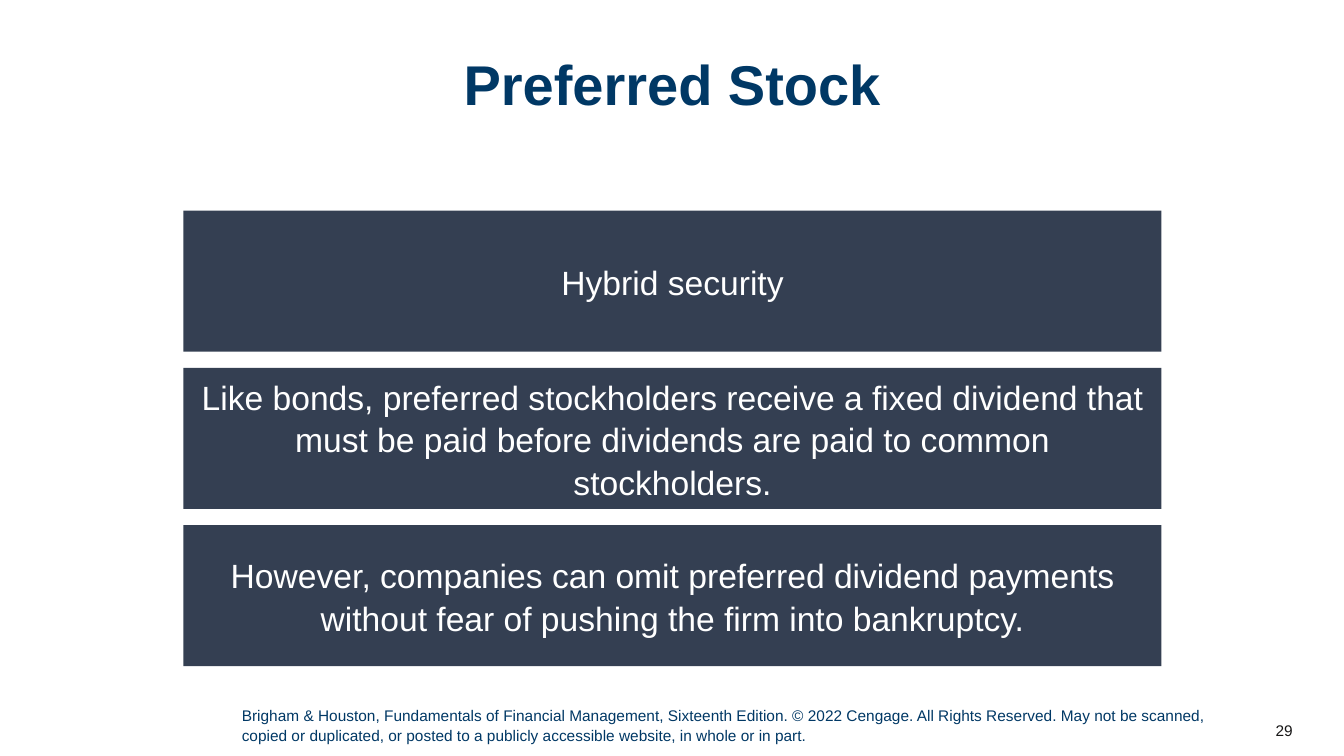
from pptx import Presentation
from pptx.dml.color import RGBColor
from pptx.enum import shapes, text
from pptx.util import Inches, Pt

COLORS = {
    "navy": "003865",
    "slate": "343F52",
    "white": "FFFFFF",
    "ink": "181717",
}
FONT = "Arial"
POINTS = [
    "Hybrid security",
    "Like bonds, preferred stockholders receive a fixed dividend that must be "
    "paid before dividends are paid to common stockholders.",
    "However, companies can omit preferred dividend payments without fear of "
    "pushing the firm into bankruptcy.",
]
COPYRIGHT = (
    "Brigham & Houston, Fundamentals of Financial Management, Sixteenth Edition. "
    "© 2022 Cengage. All Rights Reserved. May not be scanned, copied or duplicated, "
    "or posted to a publicly accessible website, in whole or in part."
)


def rgb(name):
    return RGBColor.from_string(COLORS[name])


def write(shape, words, size, color, align, anchor, spacing=1.0, bold=False):
    """Fill a shape with one styled paragraph and return it."""
    frame = shape.text_frame
    frame.word_wrap = True
    frame.vertical_anchor = anchor
    paragraph = frame.paragraphs[0]
    paragraph.text = words
    paragraph.alignment = align
    paragraph.line_spacing = spacing
    paragraph.font.name = FONT
    paragraph.font.size = Pt(size)
    paragraph.font.bold = bold
    paragraph.font.color.rgb = rgb(color)
    return paragraph


def add_title(slide, left, top, width, height):
    title = slide.shapes.add_textbox(*map(Inches, (left, top, width, height)))
    write(title, "Preferred Stock", 40, "navy", text.PP_ALIGN.CENTER,
          text.MSO_ANCHOR.TOP, spacing=0.9, bold=True)


def add_points(slide, left, top, width, height, gap=0.16):
    """Stack equal bars, one for each point, inside the given box."""
    bar_height = (height - gap * (len(POINTS) - 1)) / len(POINTS)
    for row, point in enumerate(POINTS):
        bar_top = top + row * (bar_height + gap)
        bar = slide.shapes.add_shape(
            shapes.MSO_SHAPE.RECTANGLE,
            *map(Inches, (left, bar_top, width, bar_height)))
        bar.shadow.inherit = False
        bar.fill.solid()
        bar.fill.fore_color.rgb = rgb("slate")
        bar.line.fill.background()
        write(bar, point, 24, "white", text.PP_ALIGN.CENTER,
              text.MSO_ANCHOR.MIDDLE, spacing=1.05)


def add_footer(slide, left, top, width, height):
    """Place the copyright line, with the slide number to its right."""
    notice = slide.shapes.add_textbox(*map(Inches, (left, top, width, height)))
    write(notice, COPYRIGHT, 11, "navy", text.PP_ALIGN.LEFT,
          text.MSO_ANCHOR.TOP, spacing=1.05)
    number = slide.shapes.add_textbox(
        *map(Inches, (left + width + 0.02, top + 0.1, 0.8, 0.4)))
    write(number, "29", 11, "ink", text.PP_ALIGN.RIGHT, text.MSO_ANCHOR.MIDDLE)


def main():
    deck = Presentation()
    deck.slide_width = Inches(13.33)
    deck.slide_height = Inches(7.5)
    slide = deck.slides.add_slide(deck.slide_layouts[6])
    add_footer(slide, 2.3, 6.95, 9.8, 0.47)
    add_title(slide, 0.52, 0.52, 12.29, 1.33)
    add_points(slide, 1.82, 2.09, 9.7, 4.52)
    deck.save("out.pptx")


if __name__ == "__main__":
    main()
